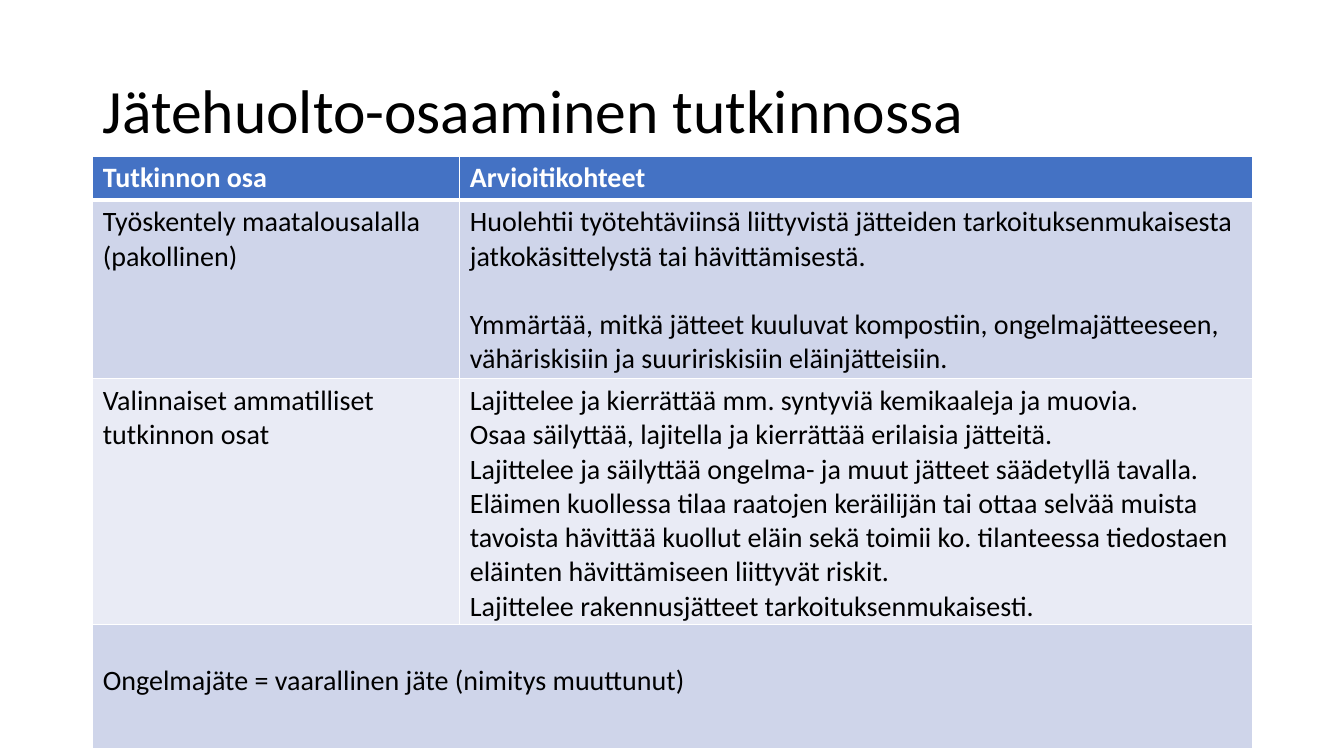
import pptx
import pptx.dml.color
import pptx.enum.text
import pptx.oxml
import pptx.oxml.ns
import pptx.util

SLIDE_WIDTH = pptx.util.Inches(13.33)
SLIDE_HEIGHT = pptx.util.Inches(7.5)
LEFT = SLIDE_WIDTH * 0.92 / 13.33
CONTENT_WIDTH = SLIDE_WIDTH * 11.5 / 13.33
COLUMN_SHARES = [3.64 / 11.5, 7.86 / 11.5]
ROW_SHARES = [0.36 / 7.5, 1.43 / 7.5, 1.96 / 7.5, 1.23 / 7.5]
ROW_FILLS = ["4472C4", "CFD5EA", "E9EBF5", "CFD5EA"]
FONT = "Calibri"
LINE_GAP = pptx.util.Pt(24.4)

TITLE = "Jätehuolto-osaaminen tutkinnossa"
ROWS = [
    [["Tutkinnon osa"], ["Arvioitikohteet"]],
    [
        ["Työskentely maatalousalalla (pakollinen)"],
        [
            "Huolehtii työtehtäviinsä liittyvistä jätteiden tarkoituksenmukaisesta jatkokäsittelystä tai hävittämisestä.",
            "Ymmärtää, mitkä jätteet kuuluvat kompostiin, ongelmajätteeseen, vähäriskisiin ja suuririskisiin eläinjätteisiin.",
        ],
    ],
    [
        ["Valinnaiset ammatilliset tutkinnon osat"],
        [
            "Lajittelee ja kierrättää mm. syntyviä kemikaaleja ja muovia.",
            "Osaa säilyttää, lajitella ja kierrättää erilaisia jätteitä.",
            "Lajittelee ja säilyttää ongelma- ja muut jätteet säädetyllä tavalla.",
            "Eläimen kuollessa tilaa raatojen keräilijän tai ottaa selvää muista tavoista hävittää kuollut eläin sekä toimii ko. tilanteessa tiedostaen eläinten hävittämiseen liittyvät riskit.",
            "Lajittelee rakennusjätteet tarkoituksenmukaisesti.",
        ],
    ],
    [["Ongelmajäte = vaarallinen jäte (nimitys muuttunut)"], []],
]


def color(value):
    return pptx.dml.color.RGBColor.from_string(value)


def add_run(paragraph, text, size, value, bold=False):
    run = paragraph.add_run()
    run.text = text
    run.font.name = FONT
    run.font.size = pptx.util.Pt(size)
    run.font.bold = bold
    run.font.color.rgb = color(value)


def add_title(slide):
    box = slide.shapes.add_textbox(
        int(LEFT), int(SLIDE_HEIGHT * 0.4 / 7.5),
        int(CONTENT_WIDTH), int(SLIDE_HEIGHT * 1.45 / 7.5))
    frame = box.text_frame
    frame.word_wrap = True
    frame.vertical_anchor = pptx.enum.text.MSO_ANCHOR.MIDDLE
    paragraph = frame.paragraphs[0]
    paragraph.line_spacing = 0.9
    add_run(paragraph, TITLE, 44, "000000")


def set_borders(cell, bottom_width):
    properties = cell._tc.get_or_add_tcPr()
    widths = {"lnL": 1, "lnR": 1, "lnT": 1, "lnB": bottom_width}
    for position, (side, width) in enumerate(widths.items()):
        line = pptx.oxml.parse_xml(
            f'<a:{side} {pptx.oxml.ns.nsdecls("a")} w="{pptx.util.Pt(width)}">'
            f'<a:solidFill><a:srgbClr val="FFFFFF"/></a:solidFill></a:{side}>')
        properties.insert(position, line)


def fill_cell(cell, texts, fill, header):
    cell.fill.solid()
    cell.fill.fore_color.rgb = color(fill)
    set_borders(cell, 3 if header else 1)
    frame = cell.text_frame
    for index, text in enumerate(texts):
        paragraph = frame.add_paragraph() if index else frame.paragraphs[0]
        add_run(paragraph, text, 20, "FFFFFF" if header else "000000", header)


def add_assessment_table(slide):
    height = int(SLIDE_HEIGHT * 5.86 / 7.5)
    shape = slide.shapes.add_table(
        len(ROWS), len(COLUMN_SHARES), int(LEFT), int(SLIDE_HEIGHT * 1.55 / 7.5),
        int(CONTENT_WIDTH), height)
    table = shape.table
    for column, share in zip(table.columns, COLUMN_SHARES):
        column.width = int(CONTENT_WIDTH * share)
    for index, (texts_by_column, fill) in enumerate(zip(ROWS, ROW_FILLS)):
        table.rows[index].height = int(SLIDE_HEIGHT * ROW_SHARES[index])
        for column, texts in enumerate(texts_by_column):
            fill_cell(table.cell(index, column), texts, fill, index == 0)
    shape.height = height
    table.cell(1, 1).text_frame.paragraphs[1].space_before = LINE_GAP
    note = table.cell(3, 0)
    note.merge(table.cell(3, 1))
    note.margin_top = pptx.util.Inches(0.05) + LINE_GAP


def main():
    presentation = pptx.Presentation()
    presentation.slide_width = SLIDE_WIDTH
    presentation.slide_height = SLIDE_HEIGHT
    slide = presentation.slides.add_slide(presentation.slide_layouts[6])
    add_title(slide)
    add_assessment_table(slide)
    presentation.save("out.pptx")


if __name__ == "__main__":
    main()
